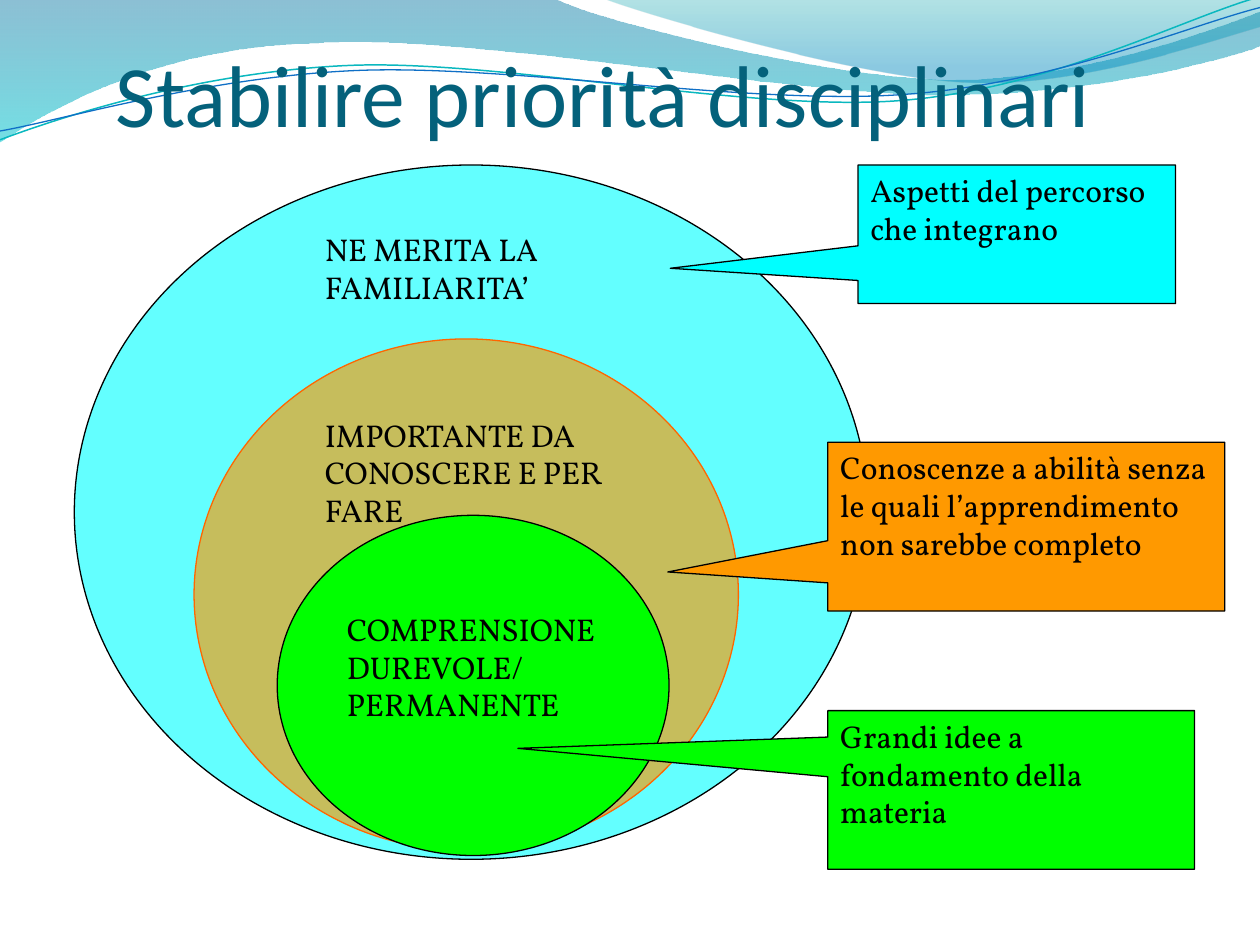
from lxml.etree import SubElement
from pptx import Presentation
from pptx.dml.color import RGBColor
from pptx.enum.shapes import MSO_SHAPE as Shape
from pptx.enum.text import MSO_ANCHOR as Anchor, PP_ALIGN as Align
from pptx.oxml.ns import qn
from pptx.util import Inches, Pt

COLORS = {
    "title": "04617B", "ink": "000000", "cyan": "00FFFF", "orange": "FF9900",
    "rim": "FF6600", "green": "00FF00", "deep_blue": "0074A1", "aqua": "00C6CF",
    "teal": "00A1A9", "sky": "008BBF", "teal_line": "0AB8BF", "blue_line": "0F6FC6",
}

BROAD_WAVE = [
    (0, 0), (4.4, -0.01), (4.76, 0.17, 6.64, 0.63, 7.58, 0.63),
    (8.53, 0.63, 9.58, 0.26, 10, 0.09), (10.01, 0.36),
    (9.83, 0.44, 8.7, 0.76, 7.46, 0.75), (6.22, 0.75, 3.82, 0.28, 2.57, 0.34),
    (1.29, 0.36, 0.46, 0.83, -0.01, 1.13),
]
RIGHT_WAVE = [
    (4.79, -0.01), (5.09, 0.11, 6.82, 0.62, 7.69, 0.65),
    (8.56, 0.69, 9.61, 0.32, 10, 0.21), (10, 0),
]
TEAL_CURVE = [
    (0, 1.11), (0.48, 0.93, 1.58, 0.57, 2.77, 0.52),
    (3.95, 0.47, 5.93, 0.89, 7.13, 0.8), (8.33, 0.71, 9.38, 0.15, 9.98, -0.02),
]
BLUE_CURVE = [
    (0, 1.04), (0.47, 0.96, 1.64, 0.61, 2.83, 0.56),
    (4.03, 0.51, 5.97, 0.84, 7.17, 0.75), (8.36, 0.67, 9.41, 0.21, 10, 0.06),
]


def rgb(name):
    return RGBColor.from_string(COLORS[name])


def set_opacity(parent, percent):
    for color in parent.iter(qn("a:srgbClr")):
        SubElement(color, qn("a:alpha"), val=str(percent * 1000))


def write(frame, *lines, font="Vollkorn", size=18, color="ink", anchor=Anchor.TOP,
          insets=(0.1, 0.05, 0.1, 0.05)):
    frame.word_wrap = True
    frame.vertical_anchor = anchor
    (frame.margin_left, frame.margin_top,
     frame.margin_right, frame.margin_bottom) = map(Inches, insets)
    for index, line in enumerate(lines):
        paragraph = frame.add_paragraph() if index else frame.paragraphs[0]
        paragraph.alignment = Align.LEFT
        run = paragraph.add_run()
        run.text = line
        run.font.name, run.font.size = font, Pt(size)
        run.font.color.rgb = rgb(color)


def add_curve(slide, box, segments, close):
    left, top = box
    knots = [(Inches(left + segment[-2]), Inches(top + segment[-1])) for segment in segments]
    builder = slide.shapes.build_freeform(*knots[0], scale=1.0)
    builder.add_line_segments(knots[1:], close=close)
    curve = builder.convert_to_shape()
    curve.shadow.inherit = False
    edges = list(curve._element.iter(qn("a:lnTo")))
    for edge, segment in zip(edges, segments[1:]):
        if len(segment) == 6:
            bend = SubElement(edge.getparent(), qn("a:cubicBezTo"))
            for x, y in zip(segment[::2], segment[1::2]):
                SubElement(bend, qn("a:pt"), x=str(Inches(left + x) - curve.left),
                           y=str(Inches(top + y) - curve.top))
            edge.getparent().replace(edge, bend)
    return curve


def add_waves(slide, box):
    bands = [
        (BROAD_WAVE, (("deep_blue", 0, 45), ("aqua", 1, 55))),
        (RIGHT_WAVE, (("teal", 0, 30), ("sky", 0.8, 45))),
    ]
    for segments, stops in bands:
        band = add_curve(slide, box, segments, True)
        band.line.fill.background()
        band.fill.gradient()
        band.fill.gradient_angle = 270
        for stop, (color, position, opacity) in zip(band.fill.gradient_stops, stops):
            stop.color.rgb, stop.position = rgb(color), position
            set_opacity(stop._gs, opacity)
    for segments, color, width in ((TEAL_CURVE, "teal_line", 0.85),
                                   (BLUE_CURVE, "blue_line", 0.75)):
        curve = add_curve(slide, box, segments, False)
        curve.fill.background()
        curve.line.color.rgb, curve.line.width = rgb(color), Pt(width)


def place_title(slide, box):
    title = slide.shapes.title
    title.left, title.top, title.width, title.height = map(Inches, box)
    write(title.text_frame, "Stabilire priorità disciplinari", font="Calibri", size=50,
          color="title", anchor=Anchor.BOTTOM, insets=(0, 0.05, 0, 0))
    slide.shapes._spTree.append(title._element)


def add_filled(slide, kind, box, fill, line="ink", opacity=None):
    shape = slide.shapes.add_shape(kind, *map(Inches, box))
    shape.shadow.inherit = False
    shape.fill.solid()
    shape.fill.fore_color.rgb = rgb(fill)
    if opacity:
        set_opacity(shape._element.spPr, opacity)
    shape.line.color.rgb, shape.line.width = rgb(line), Pt(0.75)
    return shape


def add_priority_rings(slide, box):
    left, top, width, height = box
    add_filled(slide, Shape.OVAL, box, "cyan", opacity=61)
    add_filled(slide, Shape.OVAL, (left + 0.95, top + 1.38, 4.32, 4.06),
               "orange", line="rim", opacity=64)
    core = add_filled(slide, Shape.OVAL, (left + 1.61, top + 2.78, 3.11, 2.7), "green")
    write(core.text_frame, "COMPRENSIONE DUREVOLE/", "PERMANENTE",
          anchor=Anchor.MIDDLE, insets=(0.1, 0.05, 0.1, 0.35))
    for offset, label_height, label in (
            (1.94, 1, "IMPORTANTE DA CONOSCERE E PER FARE"),
            (0.47, 0.7, "NE MERITA LA FAMILIARITA’")):
        label_box = (left + 1.89, top + offset, 2.52, label_height)
        write(slide.shapes.add_textbox(*map(Inches, label_box)).text_frame, label)


def add_callout(slide, box, text, fill, tip):
    callout = add_filled(slide, Shape.RECTANGULAR_CALLOUT, box, fill)
    left, top, width, height = box
    callout.adjustments[0] = (tip[0] - left) / width - 0.5
    callout.adjustments[1] = (tip[1] - top) / height - 0.5
    write(callout.text_frame, text)


def main():
    deck = Presentation()
    deck.slide_width, deck.slide_height = Inches(10), Inches(7.5)
    slide = deck.slides.add_slide(deck.slide_layouts[5])
    add_waves(slide, (0, 0))
    place_title(slide, (0.92, 0.21, 9.08, 0.94))
    add_priority_rings(slide, (0.59, 1.31, 6.3, 5.51))
    for box, text, fill, tip in (
            ((6.81, 1.31, 2.52, 1.1), "Aspetti del percorso che integrano",
             "cyan", (5.32, 2.13)),
            ((6.57, 3.51, 3.15, 1.34),
             "Conoscenze a abilità senza le quali l’apprendimento non sarebbe completo",
             "orange", (5.3, 4.54)),
            ((6.57, 5.64, 2.91, 1.26), "Grandi idee a fondamento della materia",
             "green", (4.11, 5.94))):
        add_callout(slide, box, text, fill, tip)
    deck.save("out.pptx")


if __name__ == "__main__":
    main()
